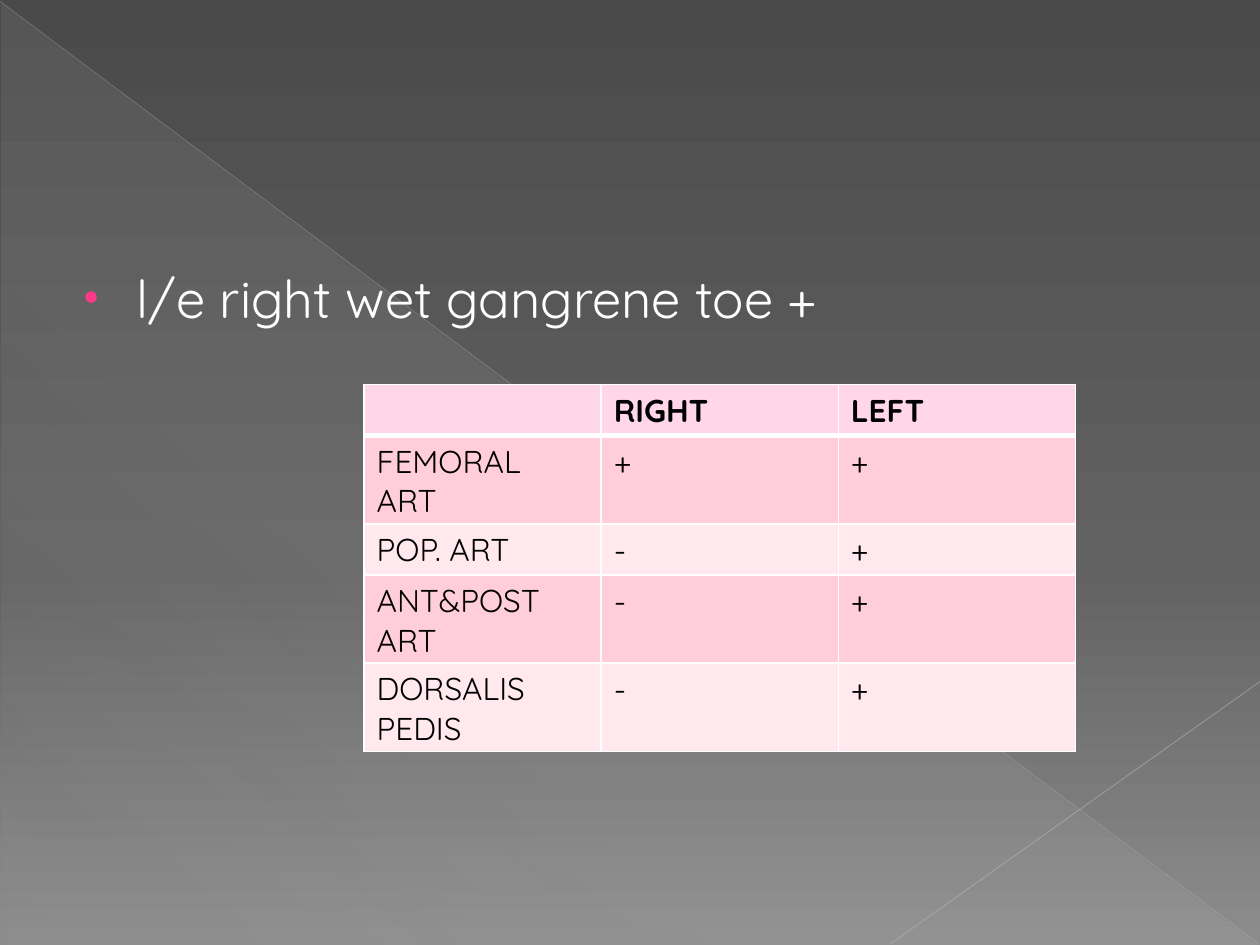
from dataclasses import dataclass

import pptx
import pptx.dml.color
import pptx.enum.shapes
import pptx.oxml
import pptx.oxml.ns
import pptx.util
from pptx.util import Cm

FONT = "Quicksand"
COLORS = {
    "white": "FFFFFF",
    "black": "000000",
    "accent": "FF388C",
    "header": "FFD7E8",
    "band_dark": "FFCEDA",
    "band_light": "FFE8EE",
    "wedge": "D2D2D2",
    "diagonal": "BFBFBF",
    "corner": "C6C6C6",
    "bg_top": "4A4A4A",
    "bg_middle": "626262",
    "bg_bottom": "8C8C8C",
}
ROWS = [
    ("", "RIGHT", "LEFT"),
    ("FEMORAL ART", "+", "+"),
    ("POP. ART", "-", "+"),
    ("ANT&POST ART", "-", "+"),
    ("DORSALIS PEDIS", "-", "+"),
]


@dataclass
class Stop:
    position: int
    color: str
    alpha: int = 100


@dataclass
class Ray:
    x1: float
    y1: float
    x2: float
    y2: float
    color: str
    width: float
    alpha: int


RAYS = [
    Ray(0, 0.03, 25.37, 19.02, "diagonal", 0.39, 35),
    Ray(25.4, 13.74, 17.96, 19.02, "corner", 0.47, 45),
]


def rgb(name: str) -> pptx.dml.color.RGBColor:
    return pptx.dml.color.RGBColor.from_string(COLORS[name])


def element(xml: str):
    tag, rest = xml.split(">", 1)
    slash = "/" if tag.endswith("/") else ""
    return pptx.oxml.parse_xml(f"{tag.rstrip('/')} {pptx.oxml.ns.nsdecls('a')}{slash}>{rest}")


def color_xml(name: str, alpha: int = 100) -> str:
    return f'<a:srgbClr val="{COLORS[name]}"><a:alpha val="{alpha * 1000}"/></a:srgbClr>'


def set_gradient(fill, parent, stops: list[Stop], angle: int) -> None:
    fill.solid()
    stops_xml = "".join(
        f'<a:gs pos="{stop.position * 1000}">{color_xml(stop.color, stop.alpha)}</a:gs>'
        for stop in stops
    )
    gradient = element(
        f'<a:gradFill rotWithShape="1"><a:gsLst>{stops_xml}</a:gsLst>'
        f'<a:lin ang="{angle * 60000}" scaled="0"/></a:gradFill>'
    )
    parent.replace(parent.find(pptx.oxml.ns.qn("a:solidFill")), gradient)


def draw_wedge(s) -> None:
    sp = s.shapes.add_shape(
        pptx.enum.shapes.MSO_SHAPE.RIGHT_TRIANGLE, Cm(0.03), Cm(0.05), Cm(25.35), Cm(19)
    )
    sp.shadow.inherit = False
    sp.line.fill.background()
    stops = [Stop(0, "wedge", 10), Stop(70, "wedge", 8), Stop(100, "wedge", 1)]
    set_gradient(sp.fill, sp.element.spPr, stops, 133)


def draw_ray(s, ray: Ray) -> None:
    line = s.shapes.add_connector(
        pptx.enum.shapes.MSO_CONNECTOR.STRAIGHT,
        Cm(ray.x1), Cm(ray.y1), Cm(ray.x2), Cm(ray.y2),
    )
    line.line.width = pptx.util.Pt(ray.width)
    line.line.color.rgb = rgb(ray.color)
    fill = line.line._get_or_add_ln().find(pptx.oxml.ns.qn("a:solidFill"))
    fill[0].append(element(f'<a:alpha val="{ray.alpha * 1000}"/>'))
    line.element.spPr.append(element("<a:effectLst/>"))


def format_runs(p, size: int, color: str, bold: bool = False) -> None:
    for r in p.runs:
        r.font.name = FONT
        r.font.size = pptx.util.Pt(size)
        r.font.bold = bold
        r.font.color.rgb = rgb(color)


def draw_finding(s, text: str) -> None:
    sp = s.shapes.add_textbox(Cm(1.27), Cm(5.23), Cm(22.86), Cm(12.7))
    tf = sp.text_frame
    tf.word_wrap = True
    tf.text = text
    p = tf.paragraphs[0]
    p.space_before = pptx.util.Pt(6)
    format_runs(p, 30, "white")
    pPr = p._p.get_or_add_pPr()
    pPr.set("marL", str(Cm(1.24)))
    pPr.set("indent", str(Cm(-1.07)))
    for xml in (
        f"<a:buClr>{color_xml('accent')}</a:buClr>",
        '<a:buSzPct val="80000"/>',
        '<a:buFont typeface="Arial"/>',
        '<a:buChar char="•"/>',
    ):
        pPr.append(element(xml))


def set_borders(cell, bottom_width: int) -> None:
    tcPr = cell._tc.get_or_add_tcPr()
    widths = {"lnL": 1, "lnR": 1, "lnT": 1, "lnB": bottom_width}
    for index, (side, width) in enumerate(widths.items()):
        border = element(
            f'<a:{side} w="{pptx.util.Pt(width)}"><a:solidFill>{color_xml("white")}'
            f"</a:solidFill></a:{side}>"
        )
        tcPr.insert(index, border)


def draw_pulse_table(s, rows: list[tuple[str, ...]]) -> None:
    row_height, column_width = Cm(1.03), Cm(4.78)
    table = s.shapes.add_table(
        len(rows), len(rows[0]), Cm(7.34), Cm(7.75),
        column_width * len(rows[0]), row_height * len(rows),
    ).table
    for column in table.columns:
        column.width = column_width
    for i, row in enumerate(rows):
        table.rows[i].height = row_height
        is_header = i == 0
        band = "header" if is_header else "band_dark" if i % 2 else "band_light"
        for j, text in enumerate(row):
            cell = table.cell(i, j)
            cell.text_frame.text = text
            format_runs(cell.text_frame.paragraphs[0], 18, "black", is_header)
            cell.fill.solid()
            cell.fill.fore_color.rgb = rgb(band)
            set_borders(cell, 3 if is_header else 1)


def main() -> None:
    prs = pptx.Presentation()
    prs.slide_width, prs.slide_height = Cm(25.4), Cm(19.05)
    s = prs.slides.add_slide(prs.slide_layouts[6])
    background = s.background.fill
    background.solid()
    stops = [Stop(0, "bg_top"), Stop(60, "bg_middle"), Stop(100, "bg_bottom")]
    set_gradient(background, s.element.cSld.bg.bgPr, stops, 90)
    draw_wedge(s)
    for ray in RAYS:
        draw_ray(s, ray)
    draw_finding(s, "l/e right wet gangrene toe +")
    draw_pulse_table(s, ROWS)
    prs.save("out.pptx")


if __name__ == "__main__":
    main()
